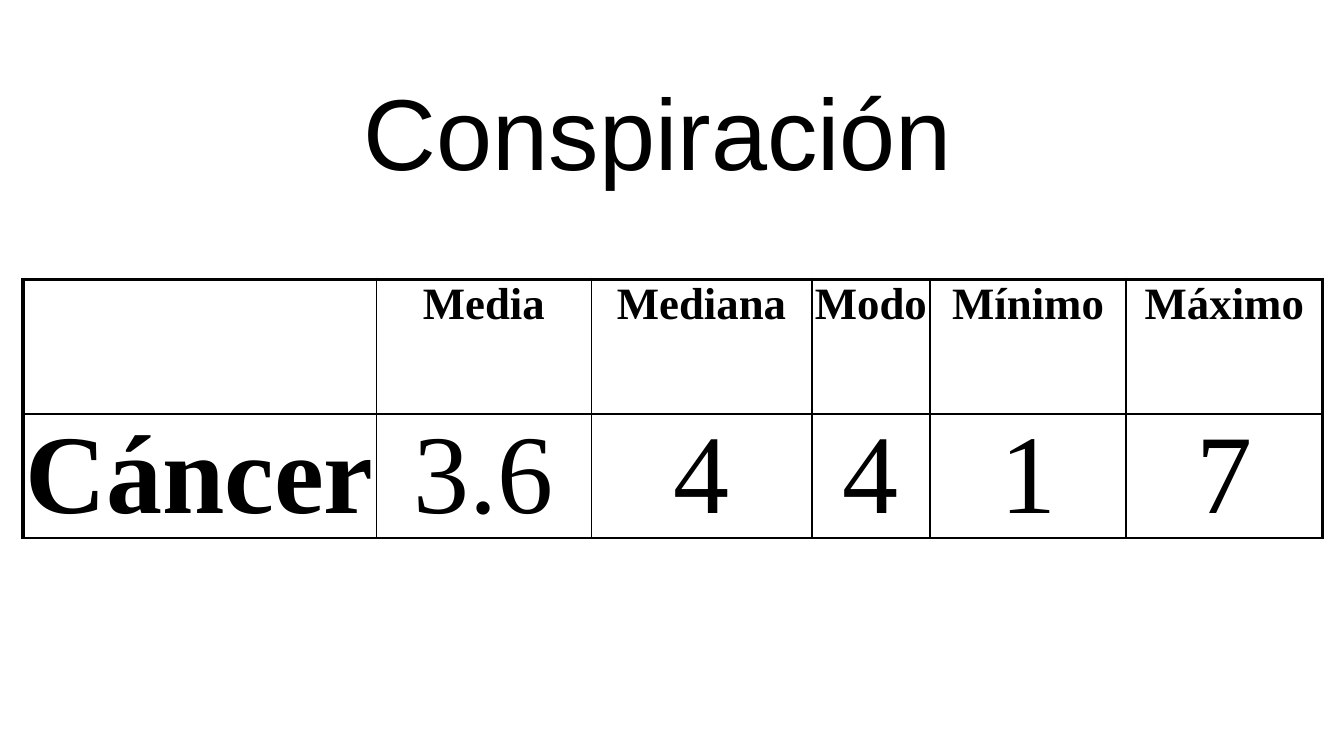
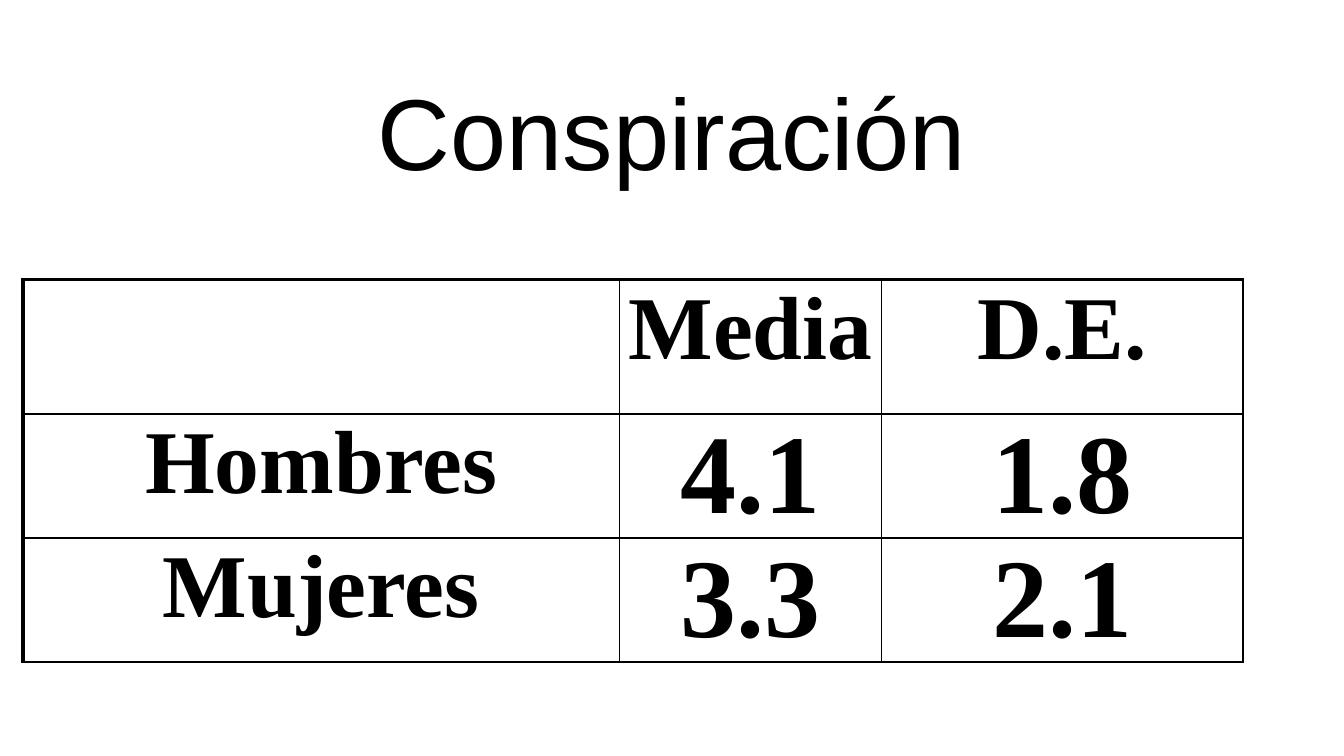
from lxml.etree import SubElement
from pptx import Presentation
from pptx.dml.color import RGBColor
from pptx.enum.text import MSO_ANCHOR, MSO_AUTO_SIZE, PP_ALIGN
from pptx.oxml.ns import qn
from pptx.util import Inches, Pt

INK = "000000"
THIN, THICK = 1, 2.25
SLIDE_WIDTH = 10
SLIDE_HEIGHT = SLIDE_WIDTH * 9 / 16
HEADER_HEIGHT, BODY_HEIGHT = 1, 0.92
TABLE_LEFT, TABLE_TOP = 0.17, 2.08

SLIDES = [
    {
        "title": "Conspiración ",
        "rows": [
            ["", "Media", "Mediana", "Modo", "Mínimo", "Máximo"],
            ["Cáncer", "3.6", "4", "4", "1", "7"],
        ],
        "widths": [2.63, 1.6, 1.64, 0.88, 1.46, 1.46],
        "header_size": 24,
        "label_size": 60,
        "bold_values": False,
        "right_edge": THICK,
    },
    {
        "title": "Conspiración",
        "rows": [
            ["", "Media", "D.E."],
            ["Hombres", "4.1", "1.8"],
            ["Mujeres", "3.3", "2.1"],
        ],
        "widths": [4.44, 1.95, 2.69],
        "header_size": 48,
        "label_size": 48,
        "bold_values": True,
        "right_edge": THIN,
    },
]
VALUE_SIZE = 60


def color(hex_code):
    """Turn a hex string into a colour."""
    return RGBColor.from_string(hex_code)


def write(text_frame, text, font_name, size, bold=False):
    """Write one centred paragraph."""
    text_frame.text = text
    paragraph = text_frame.paragraphs[0]
    paragraph.alignment = PP_ALIGN.CENTER
    for run in paragraph.runs:
        run.font.name = font_name
        run.font.size = Pt(size)
        run.font.bold = bold
        run.font.color.rgb = color(INK)


def add_title(slide, text):
    """Place and format the slide title."""
    title = slide.shapes.title
    title.left, title.top = Inches(0.75), Inches(0.5)
    title.width, title.height = Inches(8.5), Inches(0.94)
    frame = title.text_frame
    frame.word_wrap = True
    frame.auto_size = MSO_AUTO_SIZE.NONE
    frame.vertical_anchor = MSO_ANCHOR.MIDDLE
    frame.margin_left = frame.margin_right = Inches(0.1)
    frame.margin_top = frame.margin_bottom = Inches(0.1)
    write(frame, text, "Arial", 54)


def set_borders(cell, left, right, top, bottom):
    """Draw the four borders of a cell, with widths in points."""
    properties = cell._tc.get_or_add_tcPr()
    for side, width in zip("LRTB", (left, right, top, bottom)):
        line = SubElement(properties, qn(f"a:ln{side}"), w=str(Pt(width)))
        fill = SubElement(line, qn("a:solidFill"))
        SubElement(fill, qn("a:srgbClr"), val=INK)


def add_statistics(slide, content):
    """Add the ruled table of statistics."""
    rows, widths = content["rows"], content["widths"]
    heights = [HEADER_HEIGHT] + [BODY_HEIGHT] * (len(rows) - 1)
    table = slide.shapes.add_table(
        len(rows), len(widths), Inches(TABLE_LEFT), Inches(TABLE_TOP),
        Inches(sum(widths)), Inches(sum(heights))).table
    table.first_row = table.horz_banding = False
    for column, width in zip(table.columns, widths):
        column.width = Inches(width)
    for row, height in zip(table.rows, heights):
        row.height = Inches(height)

    for r, labels in enumerate(rows):
        for c, label in enumerate(labels):
            cell = table.cell(r, c)
            cell.margin_left = cell.margin_right = 0
            cell.margin_top = cell.margin_bottom = 0
            if r == 0:
                size = content["header_size"]
            else:
                size = content["label_size"] if c == 0 else VALUE_SIZE
            bold = r == 0 or c == 0 or content["bold_values"]
            write(cell.text_frame, label, "Times New Roman", size, bold)
            set_borders(
                cell,
                left=THICK if c == 0 else THIN,
                right=content["right_edge"] if c == len(widths) - 1 else THIN,
                top=THICK if r == 0 else THIN,
                bottom=THIN)
            cell.fill.background()


def main():
    """Build the presentation."""
    presentation = Presentation()
    presentation.slide_width = Inches(SLIDE_WIDTH)
    presentation.slide_height = Inches(SLIDE_HEIGHT)
    for content in SLIDES:
        slide = presentation.slides.add_slide(presentation.slide_layouts[5])
        add_title(slide, content["title"])
        add_statistics(slide, content)
    presentation.save("out.pptx")


if __name__ == "__main__":
    main()
